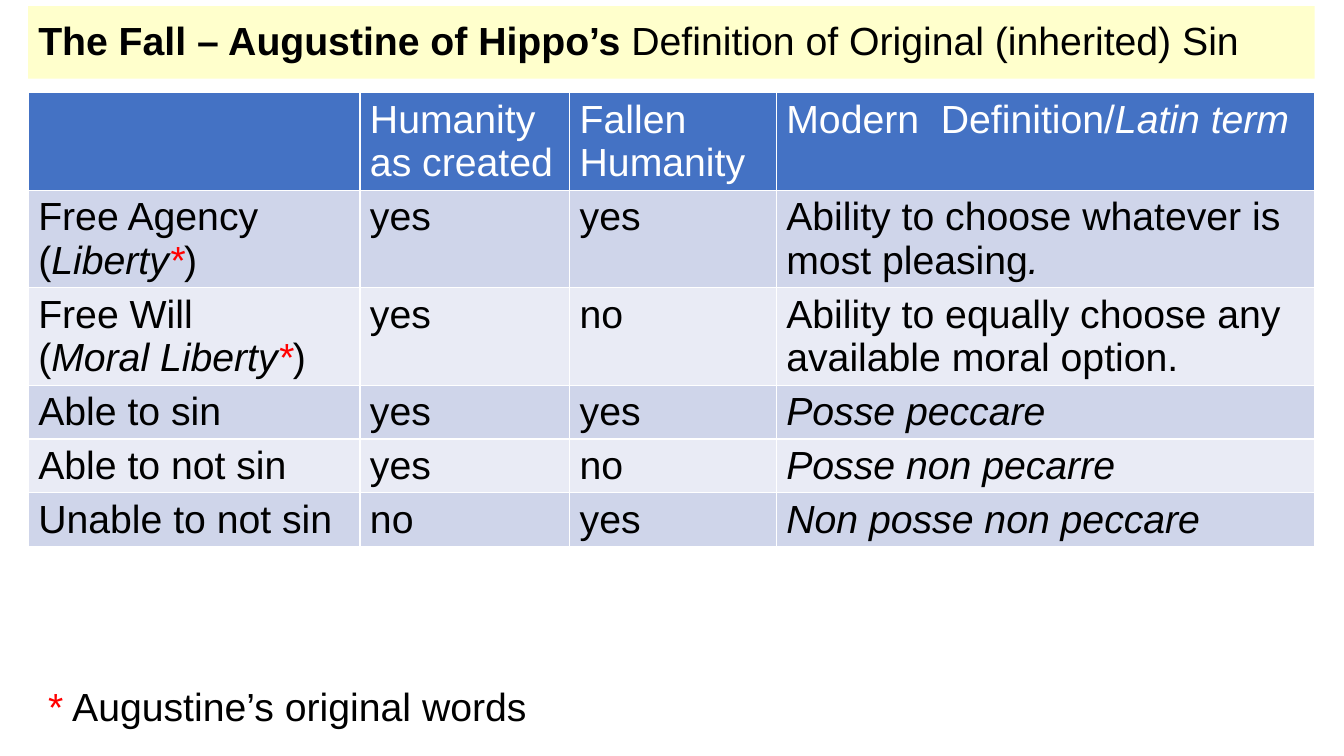
import pptx
import pptx.util
import pptx.dml.color
import pptx.enum.text

Inches = pptx.util.Inches
RGBColor = pptx.dml.color.RGBColor
BLACK = RGBColor(0x00, 0x00, 0x00)
WHITE = RGBColor(0xFF, 0xFF, 0xFF)
RED = RGBColor(0xFF, 0x00, 0x00)
CREAM = RGBColor(0xFF, 0xFF, 0xCC)
BLUE = RGBColor(0x44, 0x72, 0xC4)
BAND_DARK = RGBColor(0xCF, 0xD5, 0xEA)
BAND_LIGHT = RGBColor(0xE9, 0xEB, 0xF5)

BASE_FONT = {"name": "Arial", "size": pptx.util.Pt(28), "bold": False, "italic": False}
ITALIC = {"italic": True}
STAR = ("*", {"color": RED})

COLUMN_WIDTHS = [3.29, 2.08, 2.05, 5.34]
ROW_HEIGHT = 0.41
HEADER = ["", "Humanity as created", "Fallen Humanity",
          [[("Modern  Definition/", {}), ("Latin term", ITALIC)]]]


def term(name, latin):
    return [[(name, {})],
            [("(", {}), (latin, ITALIC), (STAR[0], {**STAR[1], **ITALIC}), (")", {})]]


def latin(text):
    return [[(text, ITALIC)]]


BODY = [
    [term("Free Agency", "Liberty"), "yes", "yes",
     [[("Ability to choose whatever is most pleasing", {}), (".", ITALIC)]]],
    [term("Free Will", "Moral Liberty"), "yes", "no",
     "Ability to equally choose any available moral option."],
    ["Able to sin", "yes", "yes", latin("Posse peccare")],
    ["Able to not sin", "yes", "no", latin("Posse non pecarre")],
    ["Unable to not sin", "no", "yes", latin("Non posse non peccare")],
]


def write_text(tf, paragraphs, color=BLACK):
    if isinstance(paragraphs, str):
        paragraphs = [[(paragraphs, {})]] if paragraphs else []
    for i, runs in enumerate(paragraphs):
        p = tf.paragraphs[0] if i == 0 else tf.add_paragraph()
        for text, changes in runs:
            r = p.add_run()
            r.text = text
            values = {**BASE_FONT, "color": color, **changes}
            r.font.color.rgb = values.pop("color")
            for name, value in values.items():
                setattr(r.font, name, value)


def add_title(s):
    sp = s.shapes.title
    box = {"left": 0.28, "top": 0.06, "width": 12.76, "height": 0.72}
    for name, value in box.items():
        setattr(sp, name, Inches(value))
    sp.fill.solid()
    sp.fill.fore_color.rgb = CREAM
    tf = sp.text_frame
    tf.auto_size = pptx.enum.text.MSO_AUTO_SIZE.NONE
    tf.vertical_anchor = pptx.enum.text.MSO_ANCHOR.MIDDLE
    write_text(tf, [[("The Fall – Augustine of Hippo’s ", {"bold": True}),
                     ("Definition of Original (inherited) Sin", {})]])
    p = tf.paragraphs[0]
    p.alignment = pptx.enum.text.PP_ALIGN.LEFT
    p.line_spacing = 0.9


def add_comparison(s):
    rows = [HEADER] + BODY
    table = s.shapes.add_table(
        len(rows), len(COLUMN_WIDTHS), Inches(0.28), Inches(0.92),
        Inches(sum(COLUMN_WIDTHS)), Inches(ROW_HEIGHT * len(rows))).table
    for column, width in zip(table.columns, COLUMN_WIDTHS):
        column.width = Inches(width)
    for i, row in enumerate(rows):
        fill = BLUE if i == 0 else (BAND_LIGHT, BAND_DARK)[i % 2]
        for j, content in enumerate(row):
            cell = table.cell(i, j)
            cell.fill.solid()
            cell.fill.fore_color.rgb = fill
            write_text(cell.text_frame, content, WHITE if i == 0 else BLACK)


def add_footnote(s):
    sp = s.shapes.add_textbox(Inches(0.38), Inches(6.72), Inches(5.01), Inches(0.57))
    tf = sp.text_frame
    tf.word_wrap = False
    tf.auto_size = pptx.enum.text.MSO_AUTO_SIZE.SHAPE_TO_FIT_TEXT
    write_text(tf, [[STAR, (" Augustine’s original words", {})]])


def main():
    prs = pptx.Presentation()
    prs.slide_width = Inches(13.33)
    prs.slide_height = Inches(7.5)
    s = prs.slides.add_slide(prs.slide_layouts[5])
    add_title(s)
    add_comparison(s)
    add_footnote(s)
    prs.save("out.pptx")


if __name__ == "__main__":
    main()
